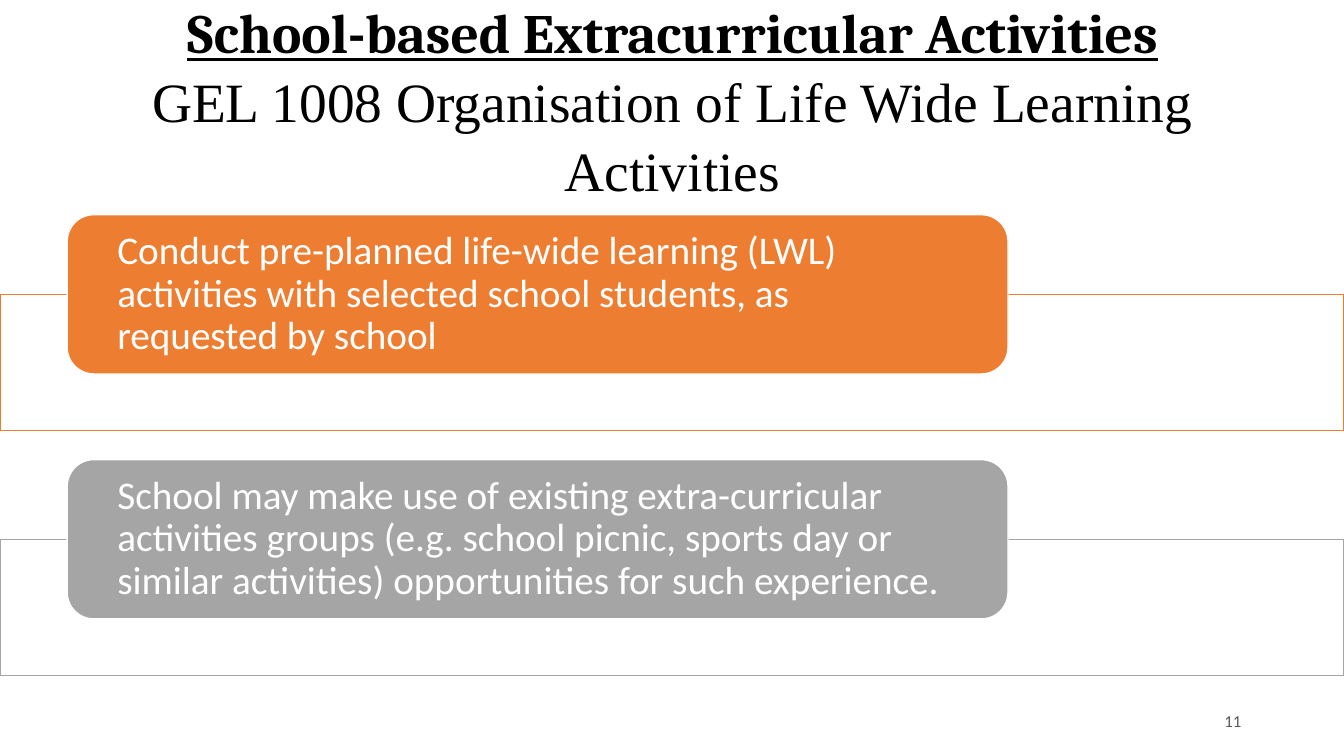
from pptx import Presentation
from pptx.dml.color import RGBColor
from pptx.enum.shapes import MSO_SHAPE as Shape
from pptx.enum.text import MSO_ANCHOR as Anchor, MSO_AUTO_SIZE as AutoSize, PP_ALIGN as Align
from pptx.util import Inches, Pt

BLACK = RGBColor(0x00, 0x00, 0x00)
WHITE = RGBColor(0xFF, 0xFF, 0xFF)
ORANGE = RGBColor(0xED, 0x7D, 0x31)
GREY = RGBColor(0xA5, 0xA5, 0xA5)
DARK_GREY = RGBColor(0x59, 0x59, 0x59)

SLIDE_WIDTH, SLIDE_HEIGHT = 13.33, 7.5
ROW_TOP, ROW_PITCH = 2.13, 2.43

TITLE_LINES = [
    ("School-based Extracurricular Activities",
     {"name": "Cambria", "bold": True, "underline": True}),
    ("GEL 1008 Organisation of Life Wide Learning Activities",
     {"name": "Times New Roman", "bold": False, "underline": False}),
]
ACTIVITIES = [
    ("Conduct pre-planned life-wide learning (LWL) activities with selected "
     "school students, as requested by school", ORANGE),
    ("School may make use of existing extra-curricular activities groups "
     "(e.g. school picnic, sports day or similar activities) opportunities "
     "for such experience.", GREY),
]


def format_font(font, color, **values):
    for name, value in values.items():
        setattr(font, name, value)
    font.color.rgb = color


def format_frame(frame, **values):
    for name, value in {"word_wrap": True, "vertical_anchor": Anchor.MIDDLE,
                        "auto_size": AutoSize.NONE, **values}.items():
        setattr(frame, name, value)


def add_span(para, text, color, **values):
    span = para.add_run()
    span.text = text
    format_font(span.font, color, **values)


def add_panel(page, kind, box, fill, line):
    panel = page.shapes.add_shape(kind, *map(Inches, box))
    panel.shadow.inherit = False
    panel.fill.solid()
    panel.fill.fore_color.rgb = fill
    panel.line.color.rgb = line
    panel.line.width = Pt(1)
    return panel


def fill_title(page, box):
    title = page.shapes.title
    title.left, title.top, title.width, title.height = map(Inches, box)
    format_frame(title.text_frame)
    para = title.text_frame.paragraphs[0]
    para.alignment = Align.CENTER
    para.line_spacing = 1.04
    for index, (text, style) in enumerate(TITLE_LINES):
        if index:
            para.add_line_break()
        add_span(para, text, BLACK, size=Pt(39.6), **style)


def add_activity(page, box, text, color):
    left, top, width, height = box
    # Outlined band behind the card, starting at the card's middle
    add_panel(page, Shape.RECTANGLE, (left, top + 0.79, width, height - 0.79),
              WHITE, color)
    # Coloured card with the text
    card = add_panel(page, Shape.ROUNDED_RECTANGLE,
                     (left + width * 0.05, top, width * 0.7, 1.58), color, WHITE)
    format_frame(card.text_frame, margin_left=Inches(0.42), margin_right=Inches(0.42),
                 margin_top=0, margin_bottom=0)
    para = card.text_frame.paragraphs[0]
    para.alignment = Align.LEFT
    para.line_spacing = 0.9
    add_span(para, text, WHITE, size=Pt(28), name="Calibri")


def add_page_number(page, box, number):
    frame = page.shapes.add_textbox(*map(Inches, box)).text_frame
    format_frame(frame)
    para = frame.paragraphs[0]
    para.alignment = Align.RIGHT
    add_span(para, number, DARK_GREY, size=Pt(12), name="Calibri")


def main():
    deck = Presentation()
    deck.slide_width, deck.slide_height = Inches(SLIDE_WIDTH), Inches(SLIDE_HEIGHT)
    page = deck.slides.add_slide(deck.slide_layouts[5])
    fill_title(page, (0.33, 0.26, 12.68, 1.45))
    for row, (text, color) in enumerate(ACTIVITIES):
        add_activity(page, (0, ROW_TOP + row * ROW_PITCH, SLIDE_WIDTH, 2.14), text, color)
    add_page_number(page, (8.83, 6.95, 3.58, 0.4), "11")
    deck.save("out.pptx")


if __name__ == "__main__":
    main()
